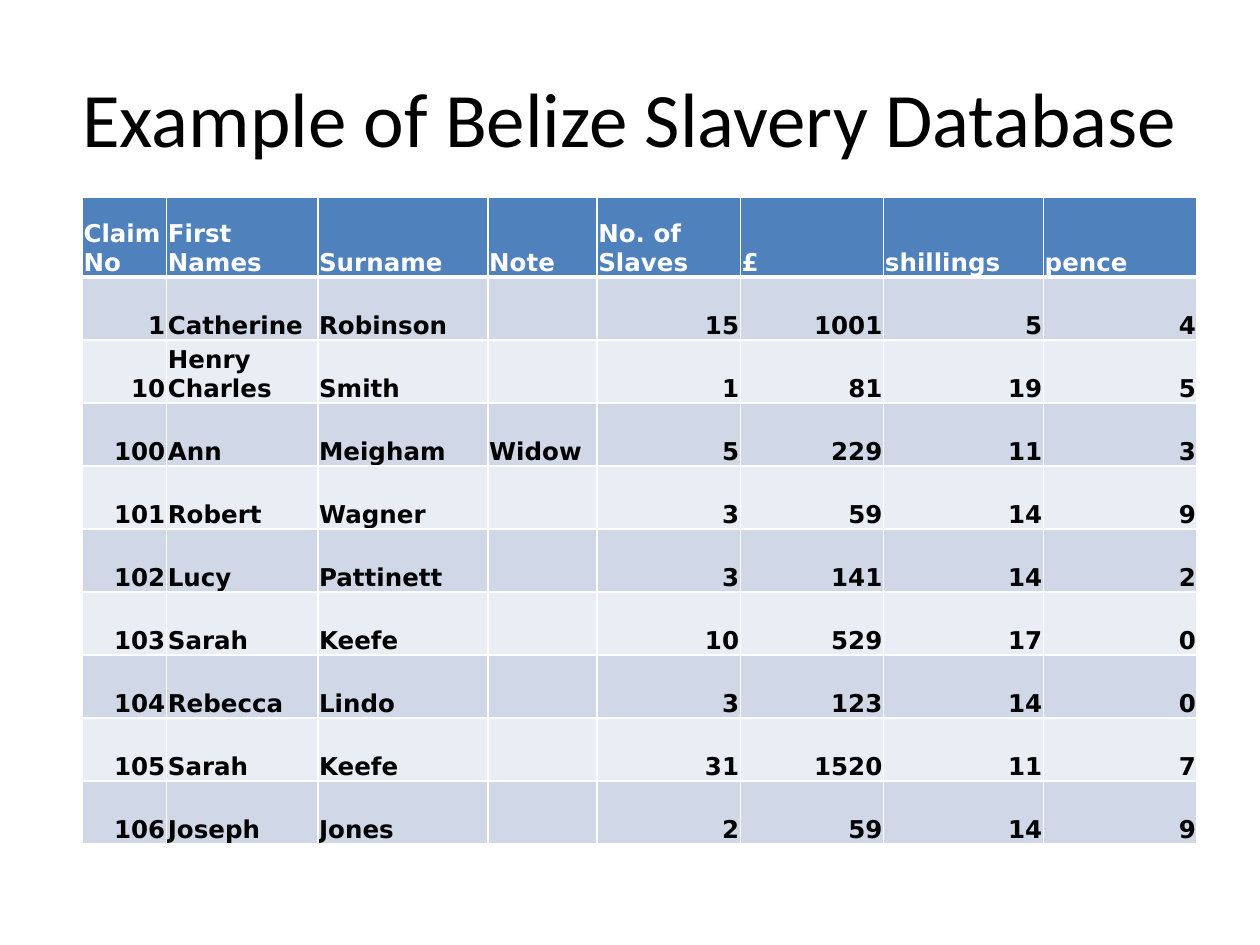
"""Build a slide with a table of claims from the Belize slavery database."""
import pptx
import pptx.dml.color
import pptx.enum.text
import pptx.oxml
import pptx.oxml.ns
import pptx.util

Pt = pptx.util.Pt
ALIGN = pptx.enum.text.PP_ALIGN
ANCHOR = pptx.enum.text.MSO_ANCHOR

COLORS = {"header": "4F81BD", "odd": "D0D8E8", "even": "E9EDF4",
          "light": "FFFFFF", "dark": "000000"}
COLUMN_WIDTHS = [48.2, 86.4, 97.2, 62.4, 81.9, 81.9, 91.3, 87.9]
HEADER_HEIGHT, ROW_HEIGHT = 45.4, 36
HEADINGS = ["Claim No", "First Names", "Surname", "Note",
            "No. of Slaves", "£", "shillings", "pence"]
CLAIMS = [
    [1, "Catherine", "Robinson", "", 15, 1001, 5, 4],
    [10, "Henry Charles", "Smith", "", 1, 81, 19, 5],
    [100, "Ann", "Meigham", "Widow", 5, 229, 11, 3],
    [101, "Robert", "Wagner", "", 3, 59, 14, 9],
    [102, "Lucy", "Pattinett", "", 3, 141, 14, 2],
    [103, "Sarah", "Keefe", "", 10, 529, 17, 0],
    [104, "Rebecca", "Lindo", "", 3, 123, 14, 0],
    [105, "Sarah", "Keefe", "", 31, 1520, 11, 7],
    [106, "Joseph", "Jones", "", 2, 59, 14, 9],
]


class ClaimSlide:
    """Hold the fonts and the current slide, and add its elements."""

    title_font, title_size = "Calibri", 44
    table_font, table_size = "DejaVu Sans", 14

    def __init__(self, slide):
        self.slide = slide

    def add_run(self, paragraph, text, font, size, color, bold=False):
        run = paragraph.add_run()
        run.text = text
        run.font.name, run.font.size, run.font.bold = font, Pt(size), bold
        run.font.color.rgb = pptx.dml.color.RGBColor.from_string(COLORS[color])

    def add_title(self, text, left, top, width, height):
        title = self.slide.shapes.title
        title.left, title.top = Pt(left), Pt(top)
        title.width, title.height = Pt(width), Pt(height)
        title.text_frame.vertical_anchor = ANCHOR.MIDDLE
        heading = title.text_frame.paragraphs[0]
        heading.alignment = ALIGN.CENTER
        self.add_run(heading, text, self.title_font, self.title_size, "dark")

    def add_borders(self, cell, widths):
        properties = cell._tc.get_or_add_tcPr()
        for side, width in widths.items():
            properties.append(pptx.oxml.parse_xml(
                f'<a:ln{side} {pptx.oxml.ns.nsdecls("a")} w="{Pt(width)}"><a:solidFill>'
                f'<a:srgbClr val="{COLORS["light"]}"/></a:solidFill></a:ln{side}>'))

    def fill_cell(self, cell, value, fill, color, borders):
        cell.margin_left = cell.margin_right = cell.margin_top = Pt(0.75)
        cell.margin_bottom = 0
        cell.vertical_anchor = ANCHOR.BOTTOM
        self.add_borders(cell, borders)
        cell.fill.solid()
        cell.fill.fore_color.rgb = pptx.dml.color.RGBColor.from_string(COLORS[fill])
        if value != "":
            entry = cell.text_frame.paragraphs[0]
            entry.alignment = ALIGN.RIGHT if isinstance(value, int) else ALIGN.LEFT
            self.add_run(entry, str(value), self.table_font, self.table_size, color, True)

    def add_table(self, rows, left, top, widths, heights):
        table = self.slide.shapes.add_table(
            len(rows), len(widths), Pt(left), Pt(top),
            Pt(sum(widths)), Pt(sum(heights))).table
        for column, width in zip(table.columns, widths):
            column.width = Pt(width)
        for number, (row, height) in enumerate(zip(rows, heights)):
            table.rows[number].height = Pt(height)
            fill = "header" if number == 0 else "odd" if number % 2 else "even"
            color = "light" if number == 0 else "dark"
            borders = {"L": 1, "R": 1, "T": 3 if number == 1 else 1,
                       "B": 3 if number == 0 else 1}
            for cell, value in zip(table.rows[number].cells, row):
                self.fill_cell(cell, value, fill, color, borders)


def main():
    deck = pptx.Presentation()
    deck.slide_width, deck.slide_height = Pt(720), Pt(540)
    page = ClaimSlide(deck.slides.add_slide(deck.slide_layouts[5]))
    page.add_title("Example of Belize Slavery Database", 36, 21.6, 648, 90)
    heights = [HEADER_HEIGHT] + [ROW_HEIGHT] * len(CLAIMS)
    page.add_table([HEADINGS] + CLAIMS, 47, 113, COLUMN_WIDTHS, heights)
    deck.save("out.pptx")


if __name__ == "__main__":
    main()
